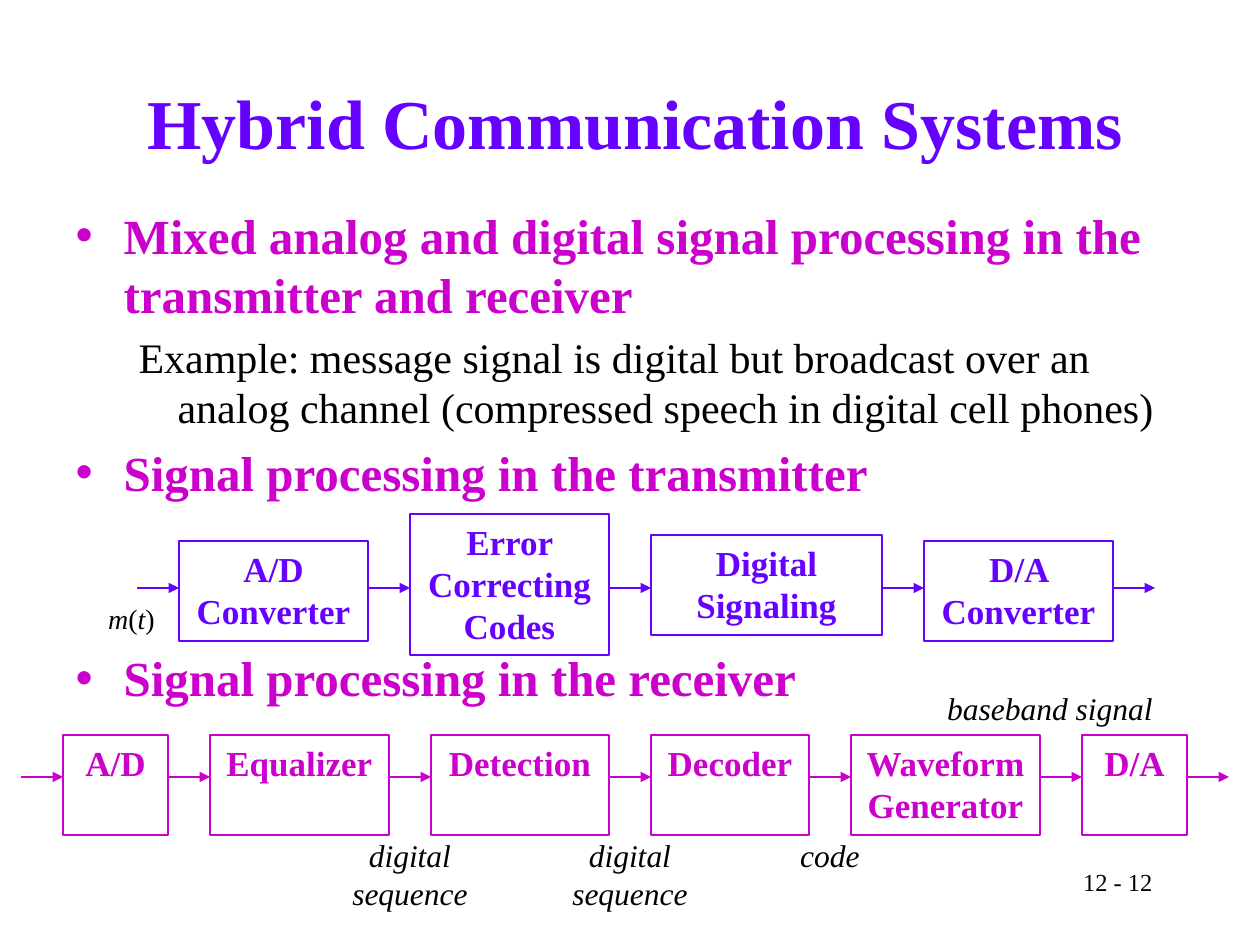
import pptx
import pptx.dml.color
import pptx.enum.shapes
import pptx.enum.text
import pptx.oxml
import pptx.oxml.ns
import pptx.util

PX = 914400 / 126
FONT = "Times New Roman"
VIOLET, MAGENTA, BLACK = "6600FF", "CC00CC", "000000"
GAP = 42
ALIGN = pptx.enum.text.PP_ALIGN
MSO_SHAPE = pptx.enum.shapes.MSO_SHAPE

TRANSMITTER = [
    ("A/D Converter", 189, 541, 100),
    ("Error Correcting Codes", 199, 514, 141),
    ("Digital Signaling", 231, 535, 100),
    ("D/A Converter", 189, 541, 100),
]
RECEIVER = [
    (text, w, 735, 100)
    for text, w in [("A/D", 105), ("Equalizer", 179), ("Detection", 178),
                    ("Decoder", 158), ("Waveform Generator", 189), ("D/A", 105)]
]
BULLETS = [
    ("Mixed analog and digital signal processing in the transmitter and receiver", 0, 0),
    ("Example: message signal is digital but broadcast over an analog channel "
     "(compressed speech in digital cell phones)", 1, 4.8),
    ("Signal processing in the transmitter", 0, 5.6),
    ("Signal processing in the receiver", 0, 84),
]


def px(*values):
    return [pptx.util.Emu(round(v * PX)) for v in values]


def rgb(value):
    return pptx.dml.color.RGBColor.from_string(value)


def add_element(parent, tag, **attrs):
    el = pptx.oxml.parse_xml(f"<{tag} {pptx.oxml.ns.nsdecls('a')}/>")
    for name, value in attrs.items():
        el.set(name, str(value))
    parent.append(el)


def style(p, size, color, bold=False, italic=False, align=None):
    p.alignment = align
    for r in p.runs:
        r.font.name = FONT
        r.font.size = pptx.util.Pt(size)
        r.font.color.rgb = rgb(color)
        r.font.bold = bold
        r.font.italic = italic


def place(sp, *box):
    sp.left, sp.top, sp.width, sp.height = px(*box)
    sp.text_frame.auto_size = pptx.enum.text.MSO_AUTO_SIZE.NONE


def add_title(slide, text):
    sp = slide.shapes.title
    place(sp, 63, 42, 1144, 158)
    sp.text_frame.text = text
    sp.text_frame.vertical_anchor = pptx.enum.text.MSO_ANCHOR.MIDDLE
    style(sp.text_frame.paragraphs[0], 40, VIOLET, bold=True, align=ALIGN.CENTER)


def add_body(slide):
    sp = slide.placeholders[1]
    place(sp, 63, 199, 1144, 640)
    tf = sp.text_frame
    tf.text = "\n".join(text for text, _, _ in BULLETS)
    for p, (_, level, before) in zip(tf.paragraphs, BULLETS):
        p.level = level
        p.space_before = pptx.util.Pt(before)
        pPr = p._p.get_or_add_pPr()
        left, hang = px(102, 39) if level else px(48, 48)
        pPr.set("marL", str(left))
        pPr.set("indent", str(-hang))
        if level:
            add_element(pPr, "a:buNone")
            style(p, 24, BLACK)
        else:
            add_element(pPr, "a:buChar", char="•")
            style(p, 28, MAGENTA, bold=True)


def add_label(slide, text, box, size=18, italic=True, align=ALIGN.CENTER):
    sp = slide.shapes.add_textbox(*px(*box))
    sp.text_frame.word_wrap = True
    p = sp.text_frame.paragraphs[0]
    p.text = text
    style(p, size, BLACK, italic=italic, align=align)
    return p


def add_message_label(slide):
    p = add_label(slide, "m", (95, 595, 73, 47), size=16)
    for text in ("(", "t", ")"):
        p.add_run().text = text
    style(p, 16, BLACK, align=ALIGN.CENTER)
    for r in p.runs:
        r.font.italic = r.text.isalpha()


def add_block(slide, text, box, color):
    sp = slide.shapes.add_shape(MSO_SHAPE.RECTANGLE, *px(*box))
    sp.shadow.inherit = False
    sp.fill.background()
    sp.line.color.rgb = rgb(color)
    sp.line.width = pptx.util.Pt(1.5)
    tf = sp.text_frame
    tf.word_wrap = True
    tf.vertical_anchor = pptx.enum.text.MSO_ANCHOR.TOP
    tf.text = text
    style(tf.paragraphs[0], 20, color, bold=True, align=ALIGN.CENTER)


def add_arrow(slide, x, y, color):
    line = slide.shapes.add_connector(
        pptx.enum.shapes.MSO_CONNECTOR.STRAIGHT, *px(x, y, x + GAP, y))
    line.line.color.rgb = rgb(color)
    line.line.width = pptx.util.Pt(1.5)
    add_element(line.line._get_or_add_ln(), "a:tailEnd", type="triangle")
    add_element(line._element.spPr, "a:effectLst")


def add_chain(slide, blocks, x, y, color):
    add_arrow(slide, x, y, color)
    for text, w, top, h in blocks:
        x += GAP
        add_block(slide, text, (x, top, w, h), color)
        x += w
        add_arrow(slide, x, y, color)


def main():
    prs = pptx.Presentation()
    prs.slide_width, prs.slide_height = px(1260, 945)
    slide = prs.slides.add_slide(prs.slide_layouts[1])
    add_title(slide, "Hybrid Communication Systems")
    add_body(slide)
    add_chain(slide, TRANSMITTER, 137, 588, VIOLET)
    add_chain(slide, RECEIVER, 21, 777, MAGENTA)
    add_message_label(slide)
    for x in (284, 504):
        add_label(slide, "digital\nsequence", (x, 830, 252, 88))
    add_label(slide, "code", (704, 830, 252, 51))
    add_label(slide, "baseband signal", (924, 683, 252, 51))
    add_label(slide, "12 - 12", (903, 861, 262, 63), size=14, italic=False, align=ALIGN.RIGHT)
    prs.save("out.pptx")


if __name__ == "__main__":
    main()
